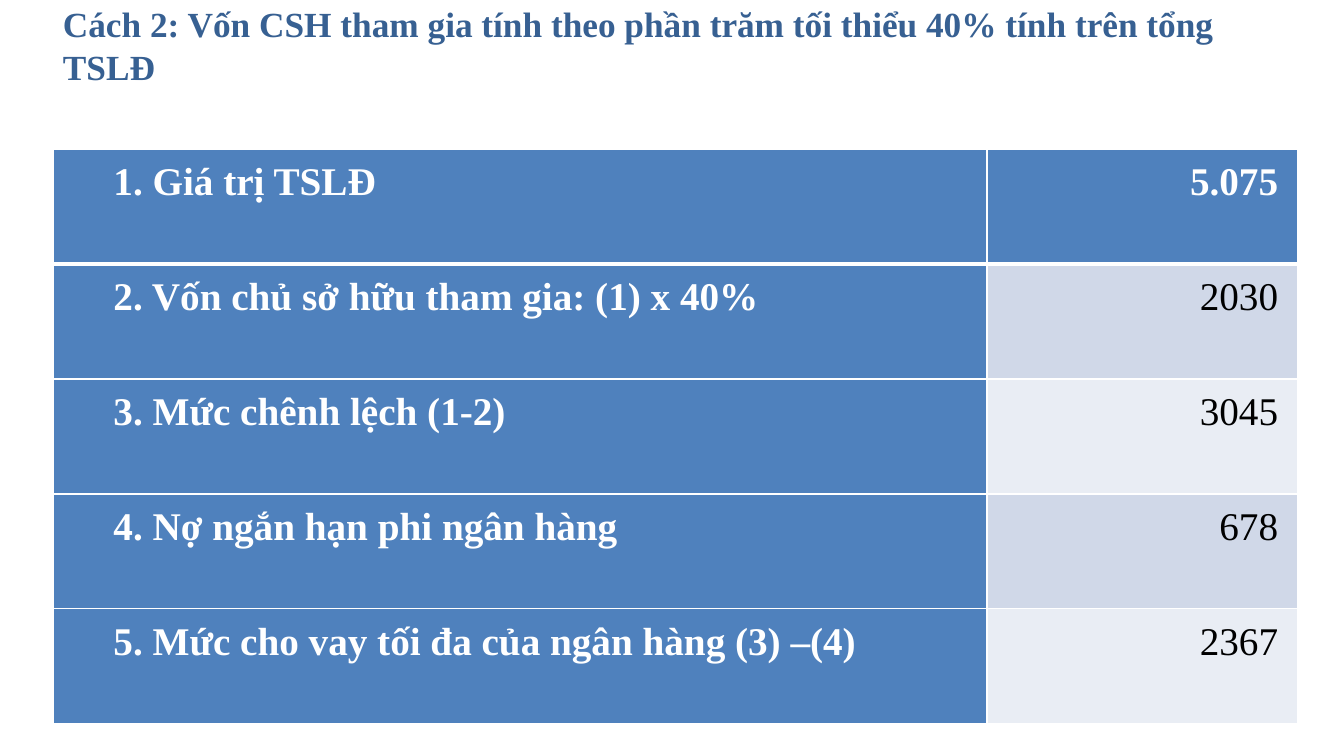
from lxml import etree
from pptx import Presentation
from pptx import util as u
from pptx.dml.color import RGBColor
from pptx.enum import text
from pptx.oxml import ns

EMU_PER_PX = 914400 / 100.8
FONT = "Times New Roman"
WHITE, BLACK, BLUE, NAVY = "FFFFFF", "000000", "4F81BD", "376092"
BANDS = ("E9EDF4", "D0D8E8")
COLUMN_WIDTHS = (934, 311)
ROW_HEIGHT = 115
LOAN_ROWS = (
    ("1. Giá trị TSLĐ ", "5.075 "),
    ("2. Vốn chủ sở hữu tham gia: (1) x 40% ", "2030 "),
    ("3. Mức chênh lệch (1-2) ", "3045 "),
    ("4. Nợ ngắn hạn phi ngân hàng ", "678 "),
    ("5. Mức cho vay tối đa của ngân hàng (3) –(4) ", "2367 "),
)


def px(length):
    """Turn pixels into EMU."""
    return u.Emu(round(length * EMU_PER_PX))


def rgb(value):
    """Turn a hex string into a colour."""
    return RGBColor.from_string(value)


def write(frame, words, *, size, color, bold, align, indent=0, spacing=1.0, after=0):
    """Write one formatted paragraph into a text frame."""
    paragraph = frame.paragraphs[0]
    paragraph.alignment = align
    paragraph.line_spacing = spacing
    paragraph.space_after = u.Pt(after)
    paragraph._p.get_or_add_pPr().set("marL", str(u.Inches(indent)))
    run = paragraph.add_run()
    run.text = words
    run.font.name = FONT
    run.font.size = u.Pt(size)
    run.font.bold = bold
    run.font.color.rgb = rgb(color)


def set_border(cell, side, width):
    """Draw a white line on one side of a cell."""
    line = etree.Element(ns.qn(f"a:ln{side}"), w=str(u.Pt(width)))
    fill = etree.SubElement(line, ns.qn("a:solidFill"))
    etree.SubElement(fill, ns.qn("a:srgbClr"), val=WHITE)
    return line


def style_cell(cell, fill, is_header, is_below_header):
    """Fill a cell and give it its white borders."""
    cell.fill.solid()
    cell.fill.fore_color.rgb = rgb(fill)
    widths = {"L": 1, "R": 1, "T": 3 if is_below_header else 1, "B": 3 if is_header else 1}
    properties = cell._tc.get_or_add_tcPr()
    for position, (side, width) in enumerate(widths.items()):
        properties.insert(position, set_border(cell, side, width))


def add_title(slide, words):
    """Add the slide heading."""
    shape = slide.shapes.add_textbox(px(53), px(3), px(1263), px(84))
    frame = shape.text_frame
    frame.word_wrap = True
    frame.vertical_anchor = text.MSO_ANCHOR.MIDDLE
    write(frame, words, size=25.2, color=NAVY, bold=True, align=text.PP_ALIGN.LEFT)


def add_loan_table(slide, rows):
    """Add the table of loan steps and amounts."""
    table = slide.shapes.add_table(
        len(rows), len(COLUMN_WIDTHS), px(53), px(149),
        px(sum(COLUMN_WIDTHS)), px(ROW_HEIGHT * len(rows)),
    ).table
    for column, width in zip(table.columns, COLUMN_WIDTHS):
        column.width = px(width)
    for row_index, values in enumerate(rows):
        for column_index, words in enumerate(values):
            cell = table.cell(row_index, column_index)
            strong = row_index == 0 or column_index == 0
            fill = BLUE if strong else BANDS[row_index % 2]
            style_cell(cell, fill, row_index == 0, row_index == 1)
            align = text.PP_ALIGN.RIGHT if column_index else text.PP_ALIGN.JUSTIFY
            write(cell.text_frame, words, size=28, color=WHITE if strong else BLACK,
                  bold=strong, align=align, indent=0.5, spacing=1.15, after=10)


def main():
    """Build and save the slide."""
    presentation = Presentation()
    presentation.slide_width, presentation.slide_height = px(1344), px(756)
    slide = presentation.slides.add_slide(presentation.slide_layouts[6])
    add_title(slide, "Cách 2: Vốn CSH tham gia tính theo phần trăm tối thiểu 40% tính trên tổng TSLĐ")
    add_loan_table(slide, LOAN_ROWS)
    presentation.save("out.pptx")


if __name__ == "__main__":
    main()
